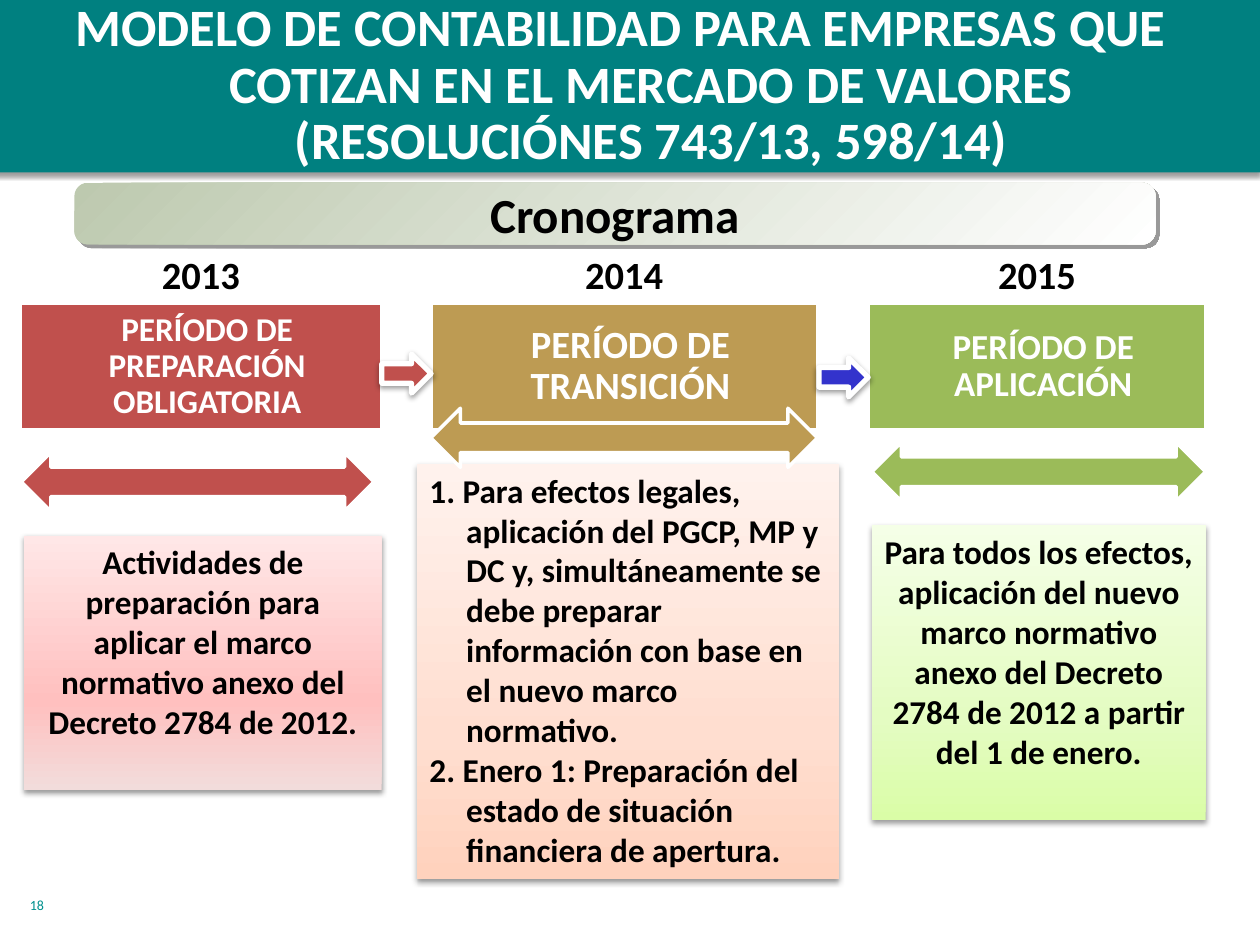
from lxml.etree import SubElement
from pptx import Presentation
from pptx.dml.color import RGBColor
from pptx.enum.shapes import MSO_SHAPE
from pptx.enum.text import MSO_ANCHOR, PP_ALIGN
from pptx.oxml.ns import qn
from pptx.util import Pt

WHITE = RGBColor(0xFF, 0xFF, 0xFF)
BLACK = RGBColor(0x00, 0x00, 0x00)
TEAL = RGBColor(0x00, 0x80, 0x80)
PAGE_TEAL = RGBColor(0x00, 0x91, 0x8E)
RED = RGBColor(0xC0, 0x50, 0x4D)
GOLD = RGBColor(0xBD, 0x9B, 0x53)
GREEN = RGBColor(0x9B, 0xBB, 0x59)
BLUE = RGBColor(0x33, 0x33, 0xCC)
SAGE = RGBColor(0xBD, 0xC9, 0xAF)
RED_TINTS = tuple(map(RGBColor.from_string, ("F2DCDB", "FFC0BF", "FFE7E7")))
GOLD_TINTS = tuple(map(RGBColor.from_string, ("FFD2BD", "FFDED0", "FFF2ED")))
GREEN_TINTS = tuple(map(RGBColor.from_string, ("DAFDA7", "E4FCC2", "F5FFE7")))

SOFT = (38, 3.1, 1.6, 90)
HARD = (40, 0, 3, 45)
MARGINS = (7.2, 3.6, 7.2, 3.6)
HEADING_MARGINS = (44.6, 3.6, 37.4, 3.6)


class Canvas:
    font = "Calibri"

    def __init__(self, slide):
        self.s = slide

    def shape(self, kind, box, fill, line=None, width=2, shadow=None):
        sp = self.s.shapes.add_shape(kind, *map(Pt, box))
        sp.shadow.inherit = False
        if isinstance(fill, RGBColor):
            sp.fill.solid()
            sp.fill.fore_color.rgb = fill
        if line is None:
            sp.line.fill.background()
        else:
            sp.line.color.rgb = line
            sp.line.width = Pt(width)
        if shadow:
            self.cast_shadow(sp, *shadow)
        return sp

    def gradient(self, sp, stops, angle):
        """Fill with (percent, colour) stops; angle is counter-clockwise."""
        sp.fill.gradient()
        sp.fill.gradient_angle = angle
        stop_list = sp._element.spPr.find(qn("a:gradFill")).find(qn("a:gsLst"))
        for old in list(stop_list):
            stop_list.remove(old)
        for percent, color in stops:
            gs = SubElement(stop_list, qn("a:gs"), pos=str(percent * 1000))
            SubElement(gs, qn("a:srgbClr"), val=str(color))

    def cast_shadow(self, sp, alpha, blur, dist, angle):
        effects = sp._element.spPr.find(qn("a:effectLst"))
        outer = SubElement(effects, qn("a:outerShdw"), blurRad=str(Pt(blur)),
                           dist=str(Pt(dist)), dir=str(angle * 60000),
                           rotWithShape="0")
        color = SubElement(outer, qn("a:srgbClr"), val=str(BLACK))
        SubElement(color, qn("a:alpha"), val=str(alpha * 1000))

    def text(self, sp, lines, size, color=BLACK, bold=True, align=PP_ALIGN.CENTER,
             anchor=MSO_ANCHOR.TOP, margins=MARGINS, hanging=0, spacing=None):
        tf = sp.text_frame
        tf.word_wrap = True
        tf.vertical_anchor = anchor
        (tf.margin_left, tf.margin_top,
         tf.margin_right, tf.margin_bottom) = map(Pt, margins)
        tf.text = "\n".join(lines)
        for p in tf.paragraphs:
            p.alignment = align
            p.line_spacing = spacing
            if hanging:
                pPr = p._p.get_or_add_pPr()
                pPr.set("marL", str(Pt(hanging)))
                pPr.set("indent", str(-Pt(hanging)))
            for r in p.runs:
                r.font.name = self.font
                r.font.size = Pt(size)
                r.font.bold = bold
                r.font.color.rgb = color

    def label(self, box, text, size, **style):
        self.text(self.s.shapes.add_textbox(*map(Pt, box)), [text], size, **style)

    def heading(self, box, text, size, color):
        sp = self.shape(MSO_SHAPE.RECTANGLE, box, color, WHITE)
        self.text(sp, [text], size, WHITE, anchor=MSO_ANCHOR.MIDDLE,
                  margins=HEADING_MARGINS, spacing=0.9)

    def card(self, box, lines, tints, **style):
        sp = self.shape(MSO_SHAPE.RECTANGLE, box, None, shadow=SOFT)
        self.gradient(sp, zip((0, 35, 100), tints), 90)
        self.text(sp, lines, 19, **style)

    def arrow(self, kind, box, color, width=2, shadow=None):
        self.shape(kind, box, color, WHITE, width, shadow)


# year, heading, heading size, colour, heading (left, width), arrow box,
# card box, card lines, card tints, card style
PERIODS = [
    ("2013", "PERÍODO DE PREPARACIÓN OBLIGATORIA", 19, RED, (11.5, 206.6),
     (12.2, 258.5, 201.6, 33.8), (13.7, 306, 204.5, 145.4),
     ["Actividades de preparación para aplicar el marco normativo anexo del "
      "Decreto 2784 de 2012."], RED_TINTS, {}),
    ("2014", "PERÍODO DE TRANSICIÓN", 22, GOLD, (246.2, 221),
     (246.2, 233.3, 221, 33.8), (238.3, 265, 241.2, 237.6),
     ["1. Para efectos legales, aplicación del PGCP, MP y DC y, simultáneamente "
      "se debe preparar información con base en el nuevo marco normativo.",
      "2. Enero 1: Preparación del estado de situación financiera de apertura."],
     GOLD_TINTS, {"align": PP_ALIGN.LEFT, "hanging": 21}),
    ("2015", "PERÍODO DE APLICACIÓN", 20, GREEN, (496.1, 193),
     (498.2, 252.7, 190.8, 33.8), (498.2, 300.2, 190.8, 168.5),
     ["Para todos los efectos, aplicación del nuevo marco normativo anexo del "
      "Decreto 2784 de 2012 a partir del 1 de enero."], GREEN_TINTS, {}),
]


def main():
    prs = Presentation()
    prs.slide_width, prs.slide_height = Pt(720), Pt(540)
    c = Canvas(prs.slides.add_slide(prs.slide_layouts[6]))

    c.shape(MSO_SHAPE.RECTANGLE, (-2.9, -2.2, 722.9, 100.8), TEAL, shadow=SOFT)
    c.label((10, 509, 150, 25.2), "18", 8, color=PAGE_TEAL, bold=False,
            align=PP_ALIGN.LEFT)
    c.label((14.4, -2.9, 680.4, 105.1),
            "MODELO DE CONTABILIDAD PARA EMPRESAS QUE COTIZAN EN EL MERCADO DE "
            "VALORES (RESOLUCIÓNES 743/13, 598/14)",
            30, color=WHITE, hanging=35.3, spacing=0.9)

    banner = c.shape(MSO_SHAPE.ROUNDED_RECTANGLE, (42.5, 104.4, 617.8, 35.3),
                     None, shadow=HARD)
    banner.adjustments[0] = 0.22
    c.gradient(banner, ((0, SAGE), (100, WHITE)), 315)
    c.text(banner, ["Cronograma"], 28, anchor=MSO_ANCHOR.MIDDLE)

    for (year, title, size, color, (left, width), arrow_box,
         card_box, lines, tints, style) in PERIODS:
        c.label((left, 139.7, width, 33.8), year, 22)
        c.heading((left, 173.5, width, 72), title, size, color)
        c.card(card_box, lines, tints, **style)
        c.arrow(MSO_SHAPE.LEFT_RIGHT_ARROW, arrow_box, color)

    for left, top, color in ((218.2, 202.3, RED), (468, 204.5, BLUE)):
        c.arrow(MSO_SHAPE.RIGHT_ARROW, (left, top, 28.1, 22.3), color, 3, SOFT)

    prs.save("out.pptx")


if __name__ == "__main__":
    main()
